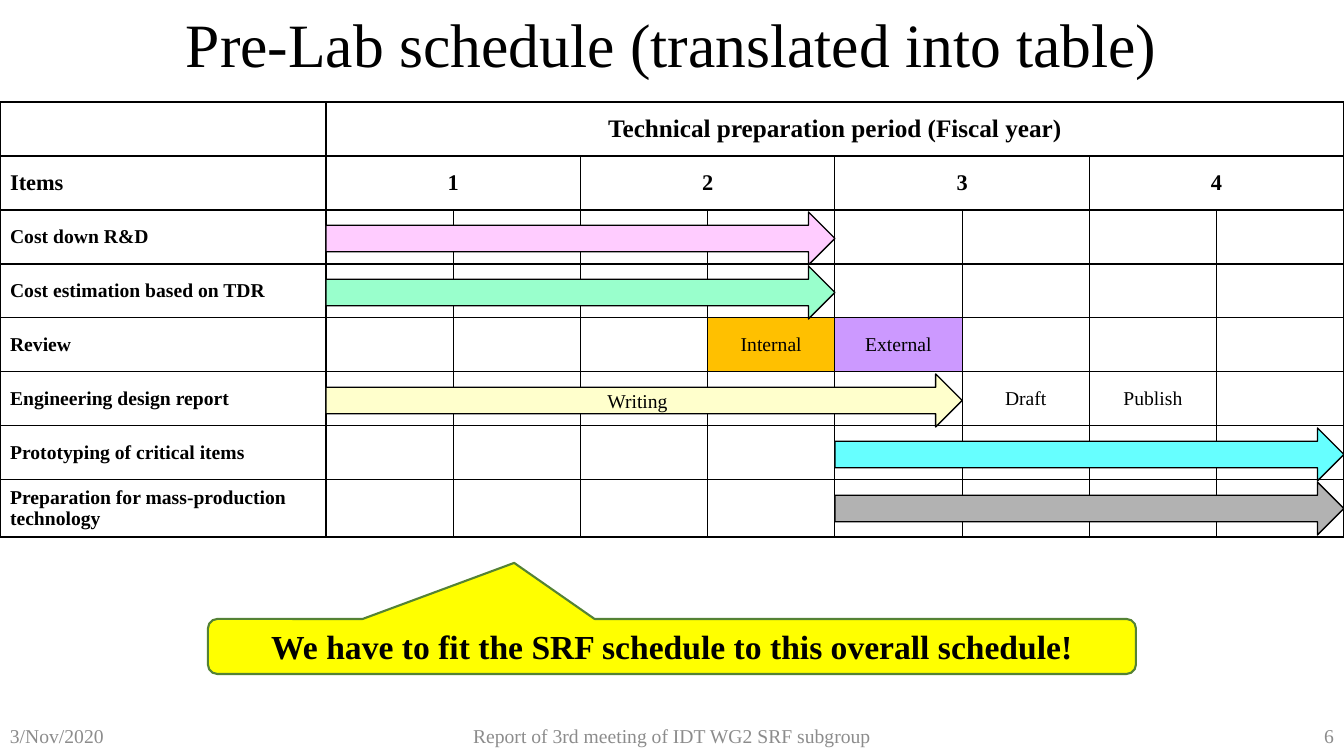
import pptx
import pptx.dml.color
import pptx.enum.shapes
import pptx.enum.text
import pptx.oxml
import pptx.oxml.ns
import pptx.util

PX = 914400 / 100.8
WIDE, HIGH = 1344, 756
FONT = "Times New Roman"
LEFT, MID, RIGHT = (pptx.enum.text.PP_ALIGN.LEFT, pptx.enum.text.PP_ALIGN.CENTER,
                    pptx.enum.text.PP_ALIGN.RIGHT)
SHAPE = pptx.enum.shapes.MSO_SHAPE

HEAD, ROW, SLOTS = 326, 54, 8
SLOT = (WIDE - HEAD) / SLOTS
ITEMS = ["Cost down R&D", "Cost estimation based on TDR", "Review",
         "Engineering design report", "Prototyping of critical items",
         "Preparation for mass-production technology"]
# item, half-year slot, label, fill
MARKS = [(2, 3, "Internal", "FFC000"), (2, 4, "External", "CC99FF"),
         (3, 5, "Draft", None), (3, 6, "Publish", None)]
# item, first slot, number of slots, fill, label
SPANS = [(0, 0, 4, "FFCCFF", ""), (1, 0, 4, "99FFCC", ""),
         (3, 0, 5, "FFFFCC", "Writing"), (4, 4, 4, "66FFFF", ""),
         (5, 4, 4, "B2B2B2", "")]


def px(n):
    return pptx.util.Emu(round(n * PX))


def color(hex):
    return pptx.dml.color.RGBColor.from_string(hex)


def write(frame, text, size=14, bold=False, ink="000000", align=MID):
    frame.word_wrap = True
    frame.vertical_anchor = pptx.enum.text.MSO_ANCHOR.MIDDLE
    para = frame.paragraphs[0]
    para.alignment = align
    para.font.size = pptx.util.Pt(size)
    if text:
        run = para.add_run()
        run.text = text
        run.font.name = FONT
        run.font.size = pptx.util.Pt(size)
        run.font.bold = bold
        run.font.color.rgb = color(ink)


def place(shape, box):
    shape.left, shape.top, shape.width, shape.height = map(px, box)


def draw(slide, kind, box, fill, line="000000", weight=1):
    shape = slide.shapes.add_shape(kind, *map(px, box))
    shape.shadow.inherit = False
    shape.fill.solid()
    shape.fill.fore_color.rgb = color(fill)
    shape.line.color.rgb = color(line)
    shape.line.width = pptx.util.Pt(weight)
    return shape


def add_title(slide, box):
    title = slide.shapes.title
    place(title, box)
    title.text_frame.auto_size = pptx.enum.text.MSO_AUTO_SIZE.NONE
    write(title.text_frame, "Pre-Lab schedule (translated into table)", size=44)


def frame_cell(cell):
    """Give a cell thin black borders on all sides and no fill."""
    props = cell._tc.get_or_add_tcPr()
    for side in "LRTB":
        props.append(pptx.oxml.parse_xml(
            f'<a:ln{side} {pptx.oxml.ns.nsdecls("a")} w="12700"><a:solidFill>'
            f'<a:srgbClr val="000000"/></a:solidFill></a:ln{side}>'))
    cell.fill.background()


def add_plan(slide, box):
    rows = len(ITEMS) + 2
    table = slide.shapes.add_table(rows, SLOTS + 1, *map(px, box)).table
    table.first_row = table.horz_banding = False
    for row in table.rows:
        row.height = px(ROW)
    for i, col in enumerate(table.columns):
        col.width = px(SLOT if i else HEAD)
    for cell in table.iter_cells():
        frame_cell(cell)

    texts = {(0, 1): ("Technical preparation period (Fiscal year)", 18, True, MID),
             (1, 0): ("Items", 16, True, LEFT)}
    table.cell(0, 1).merge(table.cell(0, SLOTS))
    for year in range(1, SLOTS // 2 + 1):
        col = 2 * year - 1
        table.cell(1, col).merge(table.cell(1, col + 1))
        texts[1, col] = (str(year), 16, True, MID)
    for i, item in enumerate(ITEMS):
        texts[i + 2, 0] = (item, 14, True, LEFT)
    for item, slot, label, fill in MARKS:
        texts[item + 2, slot + 1] = (label, 14, False, MID)
        if fill:
            cell = table.cell(item + 2, slot + 1)
            cell.fill.solid()
            cell.fill.fore_color.rgb = color(fill)
    for r in range(rows):
        for c in range(SLOTS + 1):
            text, size, bold, align = texts.get((r, c), ("", 14, False, LEFT))
            cell = table.cell(r, c)
            cell.vertical_anchor = pptx.enum.text.MSO_ANCHOR.MIDDLE
            write(cell.text_frame, text, size=size, bold=bold, align=align)


def add_spans(slide, box):
    left, top = box[:2]
    for item, start, count, fill, label in SPANS:
        arrow = draw(slide, SHAPE.RIGHT_ARROW,
                     (left + HEAD + start * SLOT, top + (item + 2) * ROW + 2,
                      count * SLOT, ROW - 1), fill)
        write(arrow.text_frame, label)


def add_callout(slide, box):
    note = draw(slide, SHAPE.ROUNDED_RECTANGULAR_CALLOUT, box, "FFFF00", "548235", 1.5)
    for i, value in enumerate((-0.17, -1.52, 0.17)):
        note.adjustments[i] = value
    write(note.text_frame, "We have to fit the SRF schedule to this overall schedule!",
          size=24, bold=True)


def add_footer(slide, box):
    left, top, width, height = box
    side = 302
    for x, w, text, align in (
            (left, side, "3/Nov/2020", LEFT),
            (left, width, "Report of 3rd meeting of IDT WG2 SRF subgroup", MID),
            (left + width - side, side, "6", RIGHT)):
        area = slide.shapes.add_textbox(*map(px, (x, top, w, height)))
        write(area.text_frame, text, ink="8C8C8C", align=align)


def main():
    deck = pptx.Presentation()
    deck.slide_width, deck.slide_height = px(WIDE), px(HIGH)
    slide = deck.slides.add_slide(deck.slide_layouts[5])
    plan = (0, 102, WIDE, ROW * (len(ITEMS) + 2))
    add_footer(slide, (0, 716, WIDE, 40))
    add_title(slide, (0, 0, WIDE, 85))
    add_plan(slide, plan)
    add_spans(slide, plan)
    add_callout(slide, (208, 619, 928, 55))
    deck.save("out.pptx")


if __name__ == "__main__":
    main()
